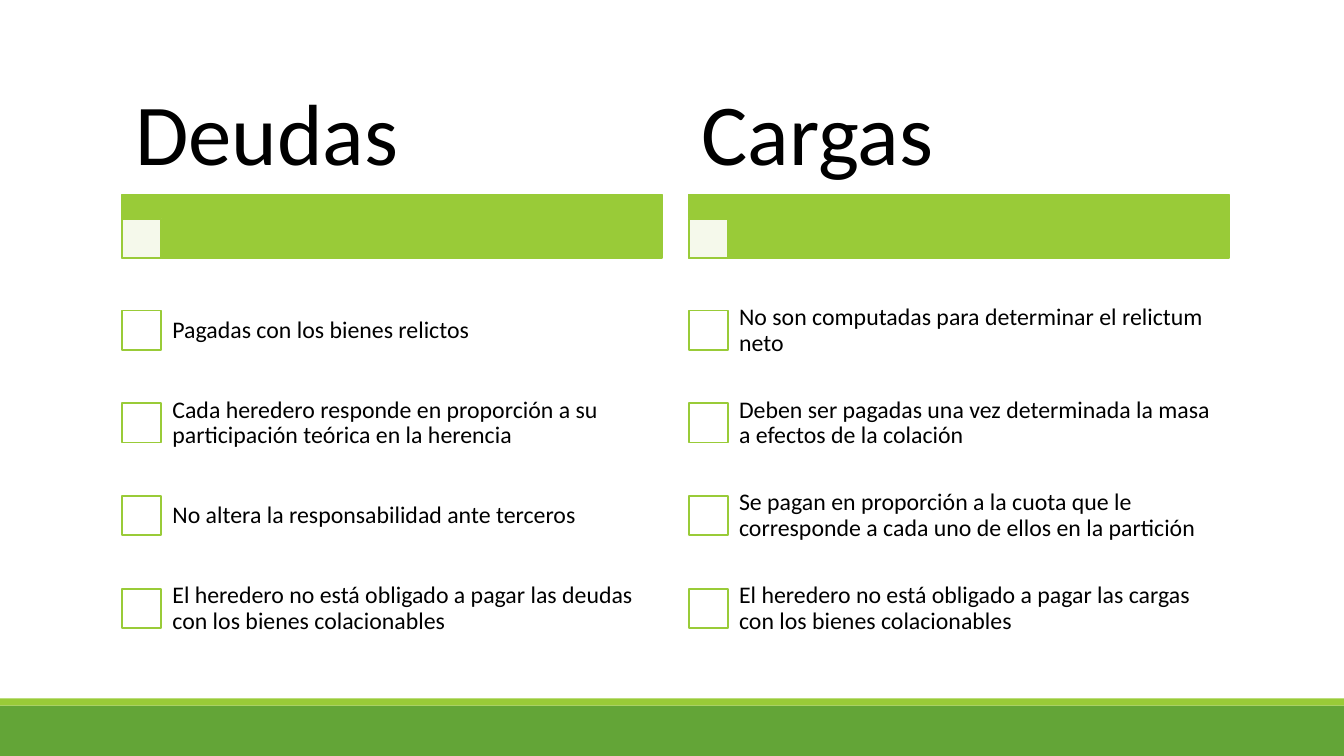
from lxml.etree import SubElement
from pptx import Presentation
from pptx.dml.color import RGBColor
from pptx.enum.shapes import MSO_SHAPE as Shape
from pptx.enum.text import MSO_ANCHOR as Anchor, PP_ALIGN as Align
from pptx.oxml.ns import qn
from pptx.util import Inches, Pt

COLUMNS = {
    "Deudas": [
        "Pagadas con los bienes relictos",
        "Cada heredero responde en proporción a su participación teórica en la herencia",
        "No altera la responsabilidad ante terceros",
        "El heredero no está obligado a pagar las deudas con los bienes colacionables",
    ],
    "Cargas": [
        "No son computadas para determinar el relictum neto",
        "Deben ser pagadas una vez determinada la masa a efectos de la colación",
        "Se pagan en proporción a la cuota que le corresponde a cada uno de ellos en la partición",
        "El heredero no está obligado a pagar las cargas con los bienes colacionables",
    ],
}
COLUMN_LEFT, COLUMN_STEP, COLUMN_WIDTH = 1.21, 5.62, 5.36
ROW_TOP, ROW_HEIGHT = 2.82, 0.92
CHECK_SIZE, CHECK_OFFSET, TEXT_INDENT = 0.39, 0.26, 0.37


def color(code):
    return RGBColor.from_string(code)


def write(frame, text, font="Calibri", size=17, ink="000000", spacing=0.9):
    para = frame.paragraphs[0]
    para.alignment = Align.LEFT
    para.line_spacing = spacing
    span = para.add_run()
    span.text = text
    span.font.name = font
    span.font.size = Pt(size)
    span.font.color.rgb = color(ink)


class ComparisonSlide:
    light_green = "99CB38"
    dark_green = "63A537"
    white = "FFFFFF"

    def __init__(self, deck):
        self.page = deck.slides.add_slide(deck.slide_layouts[6])

    def bar(self, left, top, width, height, fill, outline=None, opacity=100):
        box = self.page.shapes.add_shape(
            Shape.RECTANGLE, Inches(left), Inches(top), Inches(width), Inches(height))
        box.shadow.inherit = False
        box.fill.solid()
        box.fill.fore_color.rgb = color(fill)
        if opacity < 100:
            tone = box.fill._xPr.find(qn("a:solidFill"))[0]
            SubElement(tone, qn("a:alpha"), val=str(opacity * 1000))
        if outline:
            box.line.color.rgb = color(outline)
            box.line.width = Pt(1.25)
        else:
            box.line.fill.background()

    def checkbox(self, left, top, opacity=100):
        self.bar(left, top, CHECK_SIZE, CHECK_SIZE, self.white, self.light_green, opacity)

    def label(self, text, left, top, width, height, margin=0.13, **style):
        box = self.page.shapes.add_textbox(
            Inches(left), Inches(top), Inches(width), Inches(height))
        frame = box.text_frame
        frame.word_wrap = True
        frame.vertical_anchor = Anchor.MIDDLE
        frame.margin_left = frame.margin_right = Inches(0.13)
        frame.margin_top = frame.margin_bottom = Inches(margin)
        write(frame, text, **style)

    def column(self, left, title, points):
        self.bar(left, 1.93, COLUMN_WIDTH, 0.63, self.light_green, self.light_green)
        self.checkbox(left, 2.17, opacity=90)
        self.label(title, left, 0.8, COLUMN_WIDTH, 1.13, margin=0.09, size=62)
        for row, point in enumerate(points):
            top = ROW_TOP + row * ROW_HEIGHT
            self.checkbox(left, top + CHECK_OFFSET)
            self.label(point, left + TEXT_INDENT, top,
                       COLUMN_WIDTH - TEXT_INDENT, ROW_HEIGHT)

    def footer(self):
        self.bar(0, 7, 13.33, 0.5, self.dark_green)
        self.bar(0, 6.93, 13.33, 0.07, self.light_green)


def main():
    deck = Presentation()
    deck.slide_width, deck.slide_height = Inches(13.33), Inches(7.5)
    slide = ComparisonSlide(deck)
    slide.footer()
    for index, (title, points) in enumerate(COLUMNS.items()):
        slide.column(COLUMN_LEFT + index * COLUMN_STEP, title, points)
    deck.save("out.pptx")


if __name__ == "__main__":
    main()
